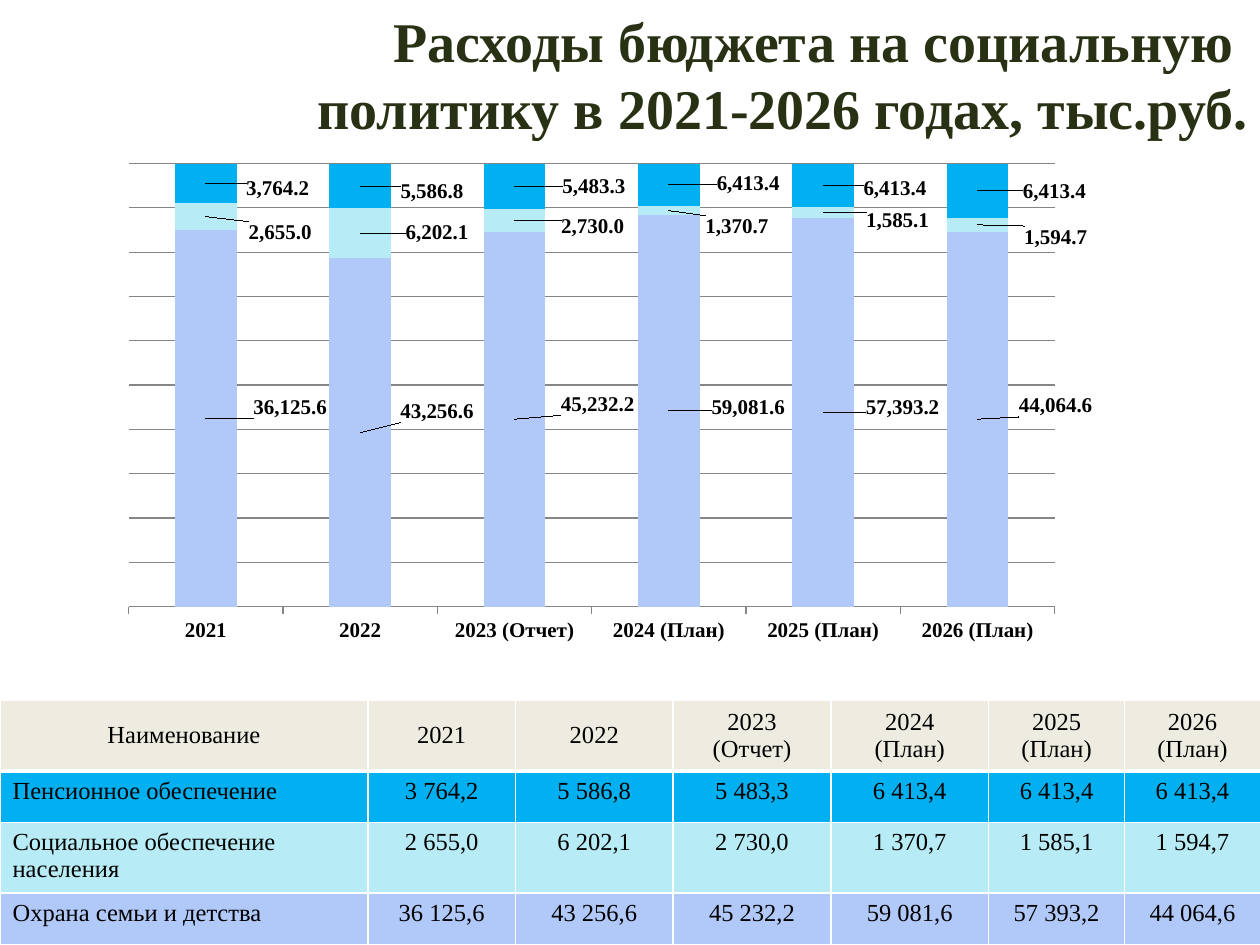
from lxml.etree import SubElement
from pptx import Presentation
from pptx.chart.data import CategoryChartData
from pptx.dml.color import RGBColor
from pptx.enum.chart import XL_CHART_TYPE, XL_TICK_MARK
from pptx.enum.text import MSO_ANCHOR, PP_ALIGN
from pptx.oxml import parse_xml
from pptx.oxml.ns import nsdecls, qn
from pptx.util import Cm, Pt

FACE = "Times New Roman"
TITLE = ["Расходы бюджета на социальную ", "политику в 2021-2026 годах, тыс.руб."]
YEARS = ["2021", "2022", "2023 (Отчет)", "2024 (План)", "2025 (План)", "2026 (План)"]
HEADINGS = ["Наименование"] + [year.replace(" ", "\n") for year in YEARS]
EXPENSES = [
    ("Пенсионное обеспечение", "00B0F0", [3764.2, 5586.8, 5483.3, 6413.4, 6413.4, 6413.4]),
    ("Социальное обеспечение населения", "B7EBF5", [2655, 6202.1, 2730, 1370.7, 1585.1, 1594.7]),
    ("Охрана семьи и детства", "B1C9F9", [36125.6, 43256.6, 45232.2, 59081.6, 57393.2, 44064.6]),
]
LABEL_SHIFTS = [
    [(6.7, -2), (6.1, -3.8), (6.6, -2.7), (6.3, -0.6), (6.3, -0.9), (6.2, -2.4)],
    [(5.9, 2.9), (6.1, -0.3), (6.2, 1), (5.4, 2.9), (5.9, 1.5), (6.2, 2.2)],
    [(5.7, 1), (5.7, 1), (6.3, 0), (6.3, -0.3), (5.7, 0.6), (6.1, 0)],
]
PLOT_FRAME = {"x": 0.101, "y": 0.006, "w": 0.735, "h": 0.792}
COLUMN_WIDTHS = [7.42, 2.97, 3.18, 3.18, 3.18, 2.74, 2.74]
ROW_HEIGHTS = [1.42, 1.04, 1.42, 1.04]


def color(value):
    return RGBColor.from_string(value)


def style(font, size, bold, shade="000000"):
    font.name, font.size, font.bold = FACE, Pt(size), bold
    font.color.rgb = color(shade)


def write(frame, lines, align, size, bold=False, shade="000000"):
    for index, line in enumerate(lines):
        paragraph = frame.add_paragraph() if index else frame.paragraphs[0]
        paragraph.alignment = align
        run = paragraph.add_run()
        run.text = line
        style(run.font, size, bold, shade)


def manual_layout(**settings):
    layout = parse_xml(f"<c:layout {nsdecls('c')}><c:manualLayout/></c:layout>")
    for tag, value in settings.items():
        SubElement(layout[0], qn(f"c:{tag}")).set("val", str(value))
    return layout


def add_title(slide):
    title = slide.shapes.title
    title.left, title.top, title.width, title.height = Cm(-0.69), Cm(0), Cm(26.11), Cm(3)
    title.text_frame.vertical_anchor = MSO_ANCHOR.TOP
    write(title.text_frame, TITLE, PP_ALIGN.RIGHT, 32, True, "283114")


def add_expense_chart(slide):
    stacked = EXPENSES[::-1]
    data = CategoryChartData(number_format="#,##0.0")
    data.categories = YEARS
    for name, _, values in stacked:
        data.add_series(name, values)
    chart = slide.shapes.add_chart(XL_CHART_TYPE.COLUMN_STACKED_100, Cm(0.03), Cm(3.23),
                                   Cm(25.4), Cm(11.28), data).chart
    chart.has_legend = chart.has_title = False
    chart.font.name, chart.font.size = "Calibri", Pt(18)
    chart.font.color.rgb = color("000000")

    category_axis, value_axis = chart.category_axis, chart.value_axis
    style(category_axis.tick_labels.font, 12, True)
    category_axis.major_tick_mark = XL_TICK_MARK.OUTSIDE
    value_axis.visible = False
    value_axis.maximum_scale, value_axis.major_unit = 1, 0.1
    for line in (category_axis.format.line, value_axis.major_gridlines.format.line):
        line.color.rgb = color("868686")
        line.width = Pt(0.75)

    plot = chart.plots[0]
    plot.gap_width, plot.overlap, plot.vary_by_categories = 150, 100, False
    for series, (_, shade, values) in zip(plot.series, stacked):
        series.format.fill.solid()
        series.format.fill.fore_color.rgb = color(shade)
        labels = series.data_labels
        labels.show_value = True
        labels.number_format, labels.number_format_is_linked = "#,##0.0", False
        style(labels.font, 12, True)
        for index in range(len(values)):
            style(series.points[index].data_label.font, 12, True)

    shifts = [shift for row in LABEL_SHIFTS for shift in row]
    for label, (right, down) in zip(chart.element.xpath(".//c:dLbl"), shifts):
        label.insert(1, manual_layout(x=right / 100, y=down / 100))

    plot_area = chart.element.xpath(".//c:plotArea")[0]
    for layout in plot_area.findall(qn("c:layout")):
        plot_area.remove(layout)
    plot_area.insert(0, manual_layout(layoutTarget="inner", xMode="edge", yMode="edge", **PLOT_FRAME))


def add_borders(cell, bottom):
    for side, width in {"L": 1, "R": 1, "T": 1, "B": bottom}.items():
        cell._tc.get_or_add_tcPr().append(parse_xml(
            f'<a:ln{side} {nsdecls("a")} w="{Pt(width)}"><a:solidFill>'
            f'<a:srgbClr val="FFFFFF"/></a:solidFill></a:ln{side}>'))


def add_expense_table(slide):
    rows = [("EEECE1", HEADINGS)]
    for name, shade, values in EXPENSES:
        amounts = [f"{value:,.1f}".replace(",", " ").replace(".", ",") for value in values]
        rows.append((shade, [name] + amounts))
    table = slide.shapes.add_table(len(rows), len(HEADINGS), Cm(0), Cm(14.12),
                                   Cm(25.4), Cm(sum(ROW_HEIGHTS))).table
    table.horz_banding = False
    for column, width in zip(table.columns, COLUMN_WIDTHS):
        column.width = Cm(width)
    for r, (shade, texts) in enumerate(rows):
        table.rows[r].height = Cm(ROW_HEIGHTS[r])
        for c, text in enumerate(texts):
            cell = table.cell(r, c)
            heading = r == 0
            add_borders(cell, 3 if heading else 1)
            cell.fill.solid()
            cell.fill.fore_color.rgb = color(shade)
            cell.vertical_anchor = MSO_ANCHOR.MIDDLE if heading else MSO_ANCHOR.TOP
            align = PP_ALIGN.CENTER if heading or c else PP_ALIGN.LEFT
            write(cell.text_frame, text.split("\n"), align, 14)


def main():
    deck = Presentation()
    deck.slide_width, deck.slide_height = Cm(25.4), Cm(19.05)
    slide = deck.slides.add_slide(deck.slide_layouts[5])
    add_title(slide)
    add_expense_table(slide)
    add_expense_chart(slide)
    deck.save("out.pptx")


if __name__ == "__main__":
    main()
